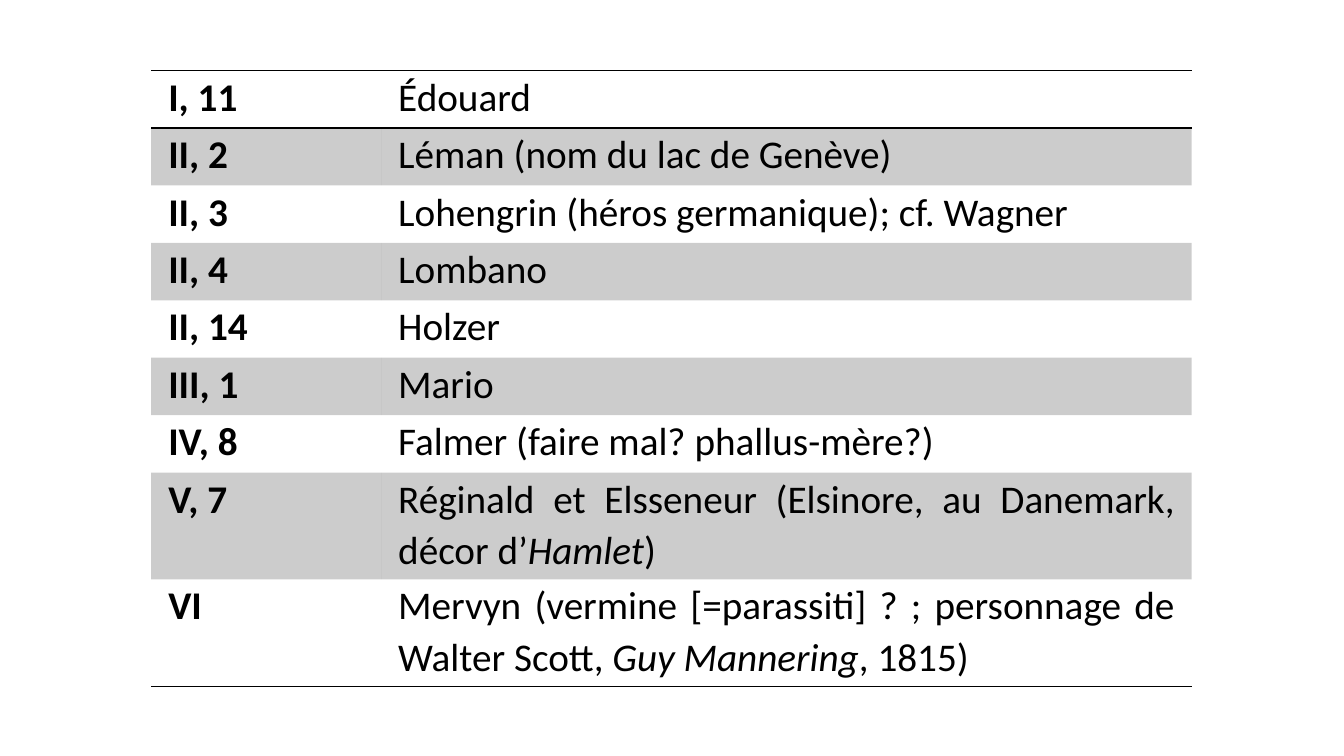
from lxml.etree import SubElement
from pptx import Presentation
from pptx.dml.color import RGBColor
from pptx.enum.text import PP_ALIGN
from pptx.oxml import parse_xml
from pptx.oxml.ns import nsdecls, qn
from pptx.util import Inches, Pt

BLACK = RGBColor(0, 0, 0)
FONT = "Calibri"
PLAIN = "{2D5ABB26-0587-4C30-8999-92F81FD0307C}"  # table style without grid
SHADE = 20  # band opacity in percent
COLS = (2.28, 8.04)
LINE, PAIR = 0.57, 1.06  # heights of one-line and two-line rows

# Canto and stanza, then the name as text pieces: every second one is italic
NAMES = [
    ("I, 11", ["Édouard"]),
    ("II, 2", ["Léman (nom du lac de Genève)"]),
    ("II, 3", ["Lohengrin (héros germanique); cf. Wagner"]),
    ("II, 4", ["Lombano"]),
    ("II, 14", ["Holzer"]),
    ("III, 1", ["Mario"]),
    ("IV, 8", ["Falmer (faire mal? phallus-mère?)"]),
    ("V, 7", ["Réginald et Elsseneur (Elsinore, au Danemark, décor d’", "Hamlet", ")"]),
    ("VI", ["Mervyn (vermine [=parassiti] ? ; personnage de Walter Scott, ",
            "Guy Mannering", ", 1815)"]),
]


def write(cell, parts, bold):
    cell.margin_left = cell.margin_right = Inches(0.17)
    cell.margin_top = cell.margin_bottom = 0
    para = cell.text_frame.paragraphs[0]
    para.alignment = PP_ALIGN.JUSTIFY
    para.line_spacing = 1.07
    font = para.font
    font.name, font.size, font.bold = FONT, Pt(28), bold
    font.color.rgb = BLACK
    for n, part in enumerate(parts):
        run = para.add_run()
        run.text = part
        if n % 2:
            run.font.italic = True


def shade(cell, band):
    if not band:
        cell.fill.background()
        return
    cell.fill.solid()
    cell.fill.fore_color.rgb = BLACK
    tint = cell.fill._xPr.find(".//" + qn("a:srgbClr"))
    SubElement(tint, qn("a:alpha")).set("val", str(SHADE * 1000))


def rule(cell, sides):
    # Border lines stand before the fill in the cell properties
    for n, side in enumerate(sides):
        line = parse_xml(
            f'<a:ln{side} {nsdecls("a")} w="{Pt(1)}"><a:solidFill>'
            f'<a:srgbClr val="{BLACK}"/></a:solidFill></a:ln{side}>')
        cell._tc.get_or_add_tcPr().insert(n, line)


def name_table(slide, left, top):
    tall = [PAIR if len(parts) > 1 else LINE for _, parts in NAMES]
    frame = slide.shapes.add_table(
        len(NAMES), len(COLS), Inches(left), Inches(top),
        Inches(sum(COLS)), Inches(sum(tall)))
    table = frame.table
    table._tbl.tblPr.find(qn("a:tableStyleId")).text = PLAIN
    for col, width in zip(table.columns, COLS):
        col.width = Inches(width)
    for r, (place, parts) in enumerate(NAMES):
        table.rows[r].height = Inches(tall[r])
        sides = "TB" if r == 0 else "B" if r == len(NAMES) - 1 else ""
        for c, text in enumerate(([place], parts)):
            cell = table.cell(r, c)
            write(cell, text, bold=c == 0)
            shade(cell, band=r % 2)
            rule(cell, sides)


def main():
    deck = Presentation()
    deck.slide_width, deck.slide_height = Inches(13.33), Inches(7.5)
    slide = deck.slides.add_slide(deck.slide_layouts[6])
    name_table(slide, 1.5, 0.7)
    deck.save("out.pptx")


if __name__ == "__main__":
    main()
